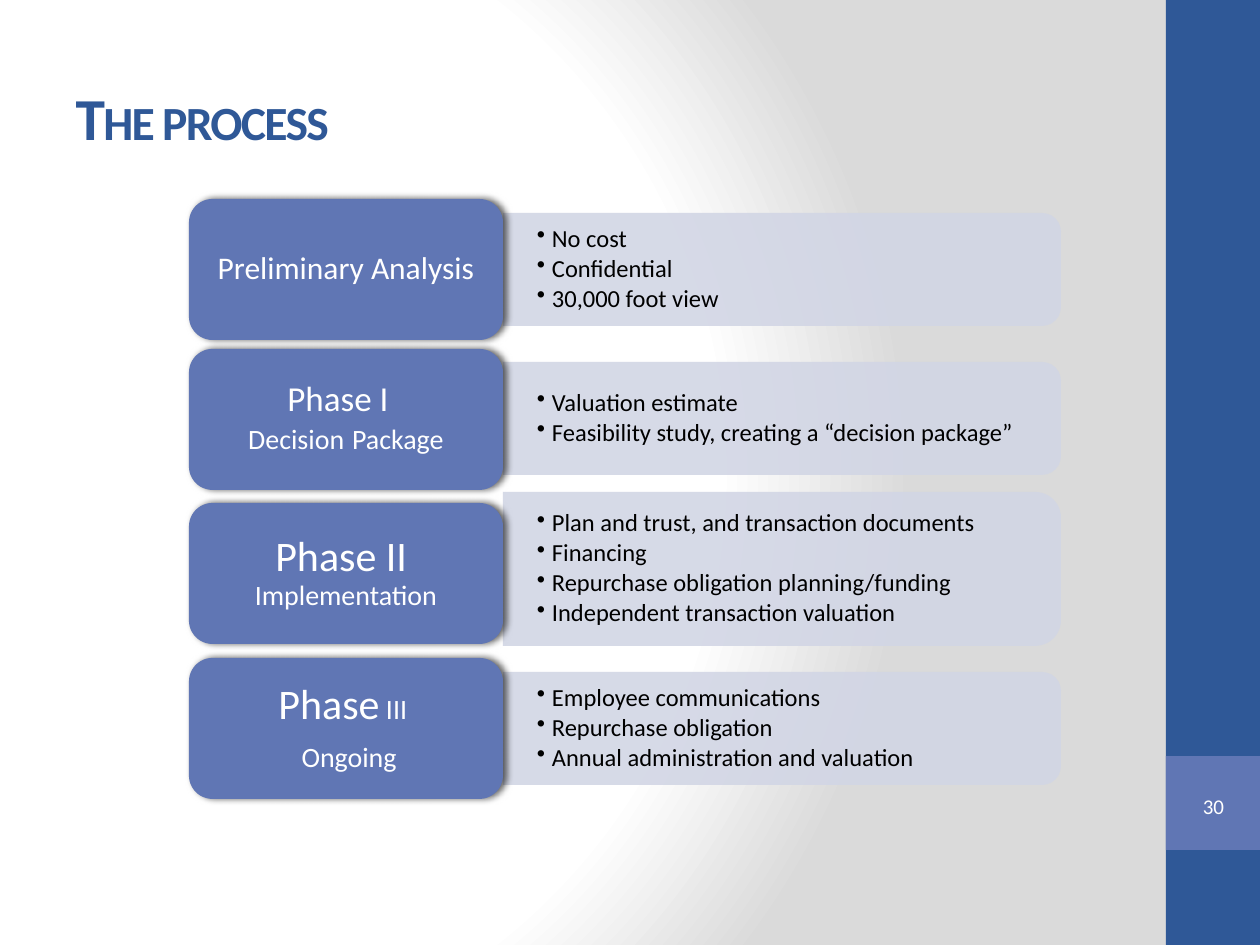
from lxml.etree import SubElement
from pptx import Presentation
from pptx.dml.color import RGBColor
from pptx.enum.shapes import MSO_SHAPE
from pptx.enum.text import MSO_ANCHOR, PP_ALIGN
from pptx.oxml import parse_xml
from pptx.oxml.ns import nsdecls, qn
from pptx.util import Emu, Pt

# Content: heading paragraphs of (text, size) runs, bullets,
# then heading top, panel top and panel height in px
TITLE = "The process"
PAGE_NUMBER = "30"
PHASES = [
    ([[("Preliminary Analysis", 18)]],
     ["No cost", "Confidential", "30,000 foot view"],
     199, 213, 113),
    ([[("Phase I  \v", 20), ("Decision", 16), (" ", 20), ("Package", 16)]],
     ["Valuation estimate", "Feasibility study, creating a “decision package”"],
     349, 362, 113),
    ([[("Phase II ", 24), (" Implementation", 16)]],
     ["Plan and trust, and transaction documents", "Financing",
      "Repurchase obligation planning/funding", "Independent transaction valuation"],
     503, 492, 154),
    ([[("Phase", 24), (" III ", 16)], [(" Ongoing", 16)]],
     ["Employee communications", "Repurchase obligation",
      "Annual administration and valuation"],
     658, 672, 113),
]

# Look and layout
FONT = "Calibri"
NAVY = RGBColor(0x2F, 0x58, 0x97)
BLUE = RGBColor(0x60, 0x76, 0xB4)
PALE = RGBColor(0xD2, 0xD6, 0xE5)
WHITE = RGBColor(0xFF, 0xFF, 0xFF)
BLACK = RGBColor(0, 0, 0)
HEADING_LEFT, HEADING_WIDTH, HEADING_HEIGHT = 189, 314, 141
PANEL_LEFT, PANEL_WIDTH = 503, 558
BULLET_INSET = 6
BULLET_INDENT = 15
BACKGROUND = f"""<a:gradFill {nsdecls('a')} rotWithShape="1"><a:gsLst>
<a:gs pos="0"><a:srgbClr val="FFFFFF"/></a:gs>
<a:gs pos="75000"><a:srgbClr val="FFFFFF"/></a:gs>
<a:gs pos="100000"><a:srgbClr val="DADADA"/></a:gs></a:gsLst>
<a:path path="circle"><a:fillToRect l="20000" t="50000" r="100000" b="50000"/></a:path>
</a:gradFill>"""


def px(length):
    return Emu(round(length * 914400 / 126))


def add_block(slide, preset, left, top, width, height, color=None):
    block = slide.shapes.add_shape(preset, px(left), px(top), px(width), px(height))
    block.shadow.inherit = False
    block.line.fill.background()
    if color is None:
        block.fill.background()
    else:
        block.fill.solid()
        block.fill.fore_color.rgb = color
    return block


def set_frame(frame, side, upright):
    frame.word_wrap = True
    frame.vertical_anchor = MSO_ANCHOR.MIDDLE
    frame.margin_left = frame.margin_right = px(side)
    frame.margin_top = frame.margin_bottom = px(upright)


def set_font(font, size, color):
    font.name = FONT
    font.size = Pt(size)
    font.color.rgb = color


def set_spacing(paragraph, after):
    paragraph.line_spacing = 0.9
    paragraph.space_after = Pt(after)


def add_panel(slide, top, height):
    # A top-rounded rectangle, turned so that its round corners face right
    left = PANEL_LEFT + (PANEL_WIDTH - height) / 2
    panel = add_block(slide, MSO_SHAPE.ROUND_2_SAME_RECTANGLE, left,
                      top + (height - PANEL_WIDTH) / 2, height, PANEL_WIDTH, PALE)
    panel.rotation = 90
    color = panel.element.spPr.find(qn("a:solidFill"))[0]
    SubElement(color, qn("a:alpha"), val="90000")


def add_bullets(slide, lines, top, height):
    box = slide.shapes.add_textbox(
        px(PANEL_LEFT), px(top + BULLET_INSET),
        px(PANEL_WIDTH - BULLET_INSET), px(height - 2 * BULLET_INSET))
    set_frame(box.text_frame, 34, 18)
    box.text_frame.text = "\n".join(lines)
    for paragraph in box.text_frame.paragraphs:
        paragraph.level = 1
        set_spacing(paragraph, 2)
        set_font(paragraph.runs[0].font, 14, BLACK)
        properties = paragraph._p.get_or_add_pPr()
        properties.set("marL", str(px(BULLET_INDENT)))
        properties.set("indent", str(-px(BULLET_INDENT)))
        SubElement(properties, qn("a:buChar"), char="•")


def add_heading(slide, paragraphs, top):
    heading = add_block(slide, MSO_SHAPE.ROUNDED_RECTANGLE, HEADING_LEFT, top,
                        HEADING_WIDTH, HEADING_HEIGHT, BLUE)
    effects = heading.element.spPr.find(qn("a:effectLst"))
    shadow = SubElement(effects, qn("a:outerShdw"), blurRad=str(Pt(4)),
                        dist=str(Pt(2)), dir="0", rotWithShape="0")
    SubElement(SubElement(shadow, qn("a:srgbClr"), val="000000"),
               qn("a:alpha"), val="60000")
    frame = heading.text_frame
    set_frame(frame, 10, 5)
    for index, runs in enumerate(paragraphs):
        paragraph = frame.add_paragraph() if index else frame.paragraphs[0]
        paragraph.alignment = PP_ALIGN.CENTER
        set_spacing(paragraph, 8)
        for text, size in runs:
            run = paragraph.add_run()
            run.text = text.rstrip("\v")
            set_font(run.font, size, WHITE)
            if text.endswith("\v"):
                paragraph.add_line_break()


def main():
    deck = Presentation()
    deck.slide_width, deck.slide_height = px(1260), px(945)
    slide = deck.slides.add_slide(deck.slide_layouts[5])

    # Background
    slide.background.fill.solid()
    solid = slide.element.find(".//" + qn("p:bgPr")).find(qn("a:solidFill"))
    solid.getparent().replace(solid, parse_xml(BACKGROUND))

    # Side bar with page number
    add_block(slide, MSO_SHAPE.RECTANGLE, 1166, 0, 94, 945, NAVY)
    add_block(slide, MSO_SHAPE.RECTANGLE, 1166, 756, 94, 94, BLUE)
    number = add_block(slide, MSO_SHAPE.DOUBLE_BRACKET, 1176, 779, 75, 54)
    number.adjustments[0] = 0.18
    set_frame(number.text_frame, 0, 0)
    number.text_frame.text = PAGE_NUMBER
    number.text_frame.paragraphs[0].alignment = PP_ALIGN.CENTER
    set_font(number.text_frame.paragraphs[0].runs[0].font, 12, WHITE)

    # Title
    title = slide.shapes.title
    title.left, title.top, title.width, title.height = map(px, (63, 38, 1050, 157))
    title.text_frame.text = TITLE
    title.text_frame.vertical_anchor = MSO_ANCHOR.MIDDLE
    title_line = title.text_frame.paragraphs[0]
    title_line.alignment = PP_ALIGN.LEFT
    title_font = title_line.runs[0].font
    set_font(title_font, 34, NAVY)
    title_font.bold = True
    title_properties = title_line.runs[0]._r.get_or_add_rPr()
    title_properties.set("cap", "small")
    title_properties.set("spc", "-100")

    # Phases
    for paragraphs, bullets, heading_top, panel_top, panel_height in PHASES:
        add_panel(slide, panel_top, panel_height)
        add_bullets(slide, bullets, panel_top, panel_height)
        add_heading(slide, paragraphs, heading_top)

    deck.save("out.pptx")


if __name__ == "__main__":
    main()
